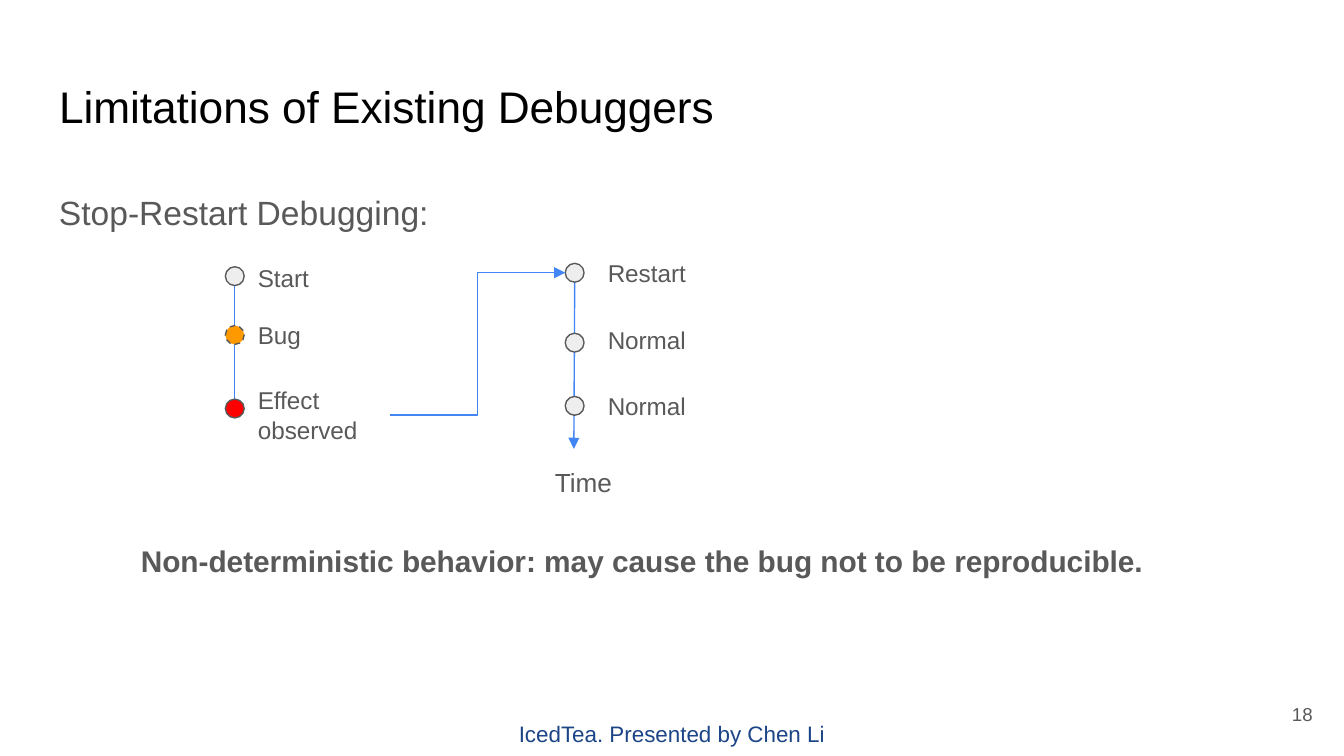
from lxml.etree import SubElement
from pptx import Presentation
from pptx.dml.color import RGBColor
from pptx.enum.dml import MSO_LINE
from pptx.enum.shapes import MSO_CONNECTOR, MSO_SHAPE
from pptx.enum.text import MSO_ANCHOR, PP_ALIGN
from pptx.oxml.ns import qn
from pptx.util import Inches, Pt

BLACK = RGBColor(0x00, 0x00, 0x00)
GRAY = RGBColor(0x59, 0x59, 0x59)
LIGHT = RGBColor(0xEE, 0xEE, 0xEE)
RED = RGBColor(0xFF, 0x00, 0x00)
ORANGE = RGBColor(0xFF, 0x99, 0x00)
BLUE = RGBColor(0x42, 0x85, 0xF4)
NAVY = RGBColor(0x1C, 0x45, 0x87)

COLUMNS, ROWS = 100, 56.25  # square grid cells of a tenth of an inch
NODE = 1.4  # node diameter in cells


class DebuggerSlide:
    font_name = "Arial"
    line_width = Pt(0.75)

    def __init__(self, presentation):
        self.slide = presentation.slides.add_slide(presentation.slide_layouts[6])
        self.column = presentation.slide_width / COLUMNS
        self.row = presentation.slide_height / ROWS

    def place(self, *cells):
        """Turn alternating column and row counts into slide lengths."""
        return [round(cell * (self.row if index % 2 else self.column))
                for index, cell in enumerate(cells)]

    def text(self, words, box, size, color=GRAY, bold=False,
             align=PP_ALIGN.LEFT, anchor=MSO_ANCHOR.TOP):
        frame = self.slide.shapes.add_textbox(*self.place(*box)).text_frame
        frame_format = {"word_wrap": True, "vertical_anchor": anchor}
        for side in ("left", "top", "right", "bottom"):
            frame_format[f"margin_{side}"] = Inches(0.1)
        for name, value in frame_format.items():
            setattr(frame, name, value)
        paragraph = frame.paragraphs[0]
        paragraph.alignment = align
        run = paragraph.add_run()
        run.text = words
        font_format = {"name": self.font_name, "size": Pt(size), "bold": bold}
        for name, value in font_format.items():
            setattr(run.font, name, value)
        run.font.color.rgb = color

    def node(self, center, middle, fill, dash=None):
        box = (center - NODE / 2, middle - NODE / 2, NODE, NODE)
        shape = self.slide.shapes.add_shape(MSO_SHAPE.OVAL, *self.place(*box))
        shape.shadow.inherit = False
        shape.fill.solid()
        shape.fill.fore_color.rgb = fill
        shape.line.color.rgb = GRAY
        shape.line.width = self.line_width
        if dash:
            shape.line.dash_style = dash

    def connector(self, start, end, kind=MSO_CONNECTOR.STRAIGHT, arrow=False):
        connector = self.slide.shapes.add_connector(kind, *self.place(*start, *end))
        connector.line.color.rgb = BLUE
        connector.line.width = self.line_width
        properties = connector._element.spPr
        if arrow:
            SubElement(properties.find(qn("a:ln")), qn("a:tailEnd"), type="triangle")
        SubElement(properties, qn("a:effectLst"))


def main():
    presentation = Presentation()
    presentation.slide_width = Inches(10)
    presentation.slide_height = presentation.slide_width * 9 // 16
    page = DebuggerSlide(presentation)

    # Title, subtitle and conclusion
    page.text("Limitations of Existing Debuggers", (3.41, 4.87, 93.2, 6.3), 23.7, BLACK)
    page.text("Stop-Restart Debugging:", (3.41, 13.3, 30.6, 5), 18)
    page.text("Non-deterministic behavior: may cause the bug not to be reproducible.",
              (9.5, 39.4, 82.7, 4.7), 16, bold=True)

    # Lines of the first run and of the rerun
    first_run, rerun = 17.47, 42.76
    page.connector((first_run, 21.3), (first_run, 29.7))
    page.connector((rerun, 21), (rerun - 0.06, 33.4), arrow=True)

    # Nodes with their labels
    first_left, rerun_left = 18.2, 44.24
    events = [
        # label, line, node middle, fill, dash, label left, top, width, height
        ("Start", first_run, 20.55, LIGHT, None, first_left, 18.6, 8.7, 4.2),
        ("Bug", first_run, 24.93, ORANGE, MSO_LINE.DASH, first_left, 22.83, 8.7, 4.2),
        ("Effect observed", first_run, 30.4, RED, None, first_left, 27.7, 10.8, 6.4),
        ("Restart", rerun, 20.3, LIGHT, None, rerun_left, 18.2, 8.7, 4.2),
        ("Normal", rerun, 25.5, LIGHT, None, rerun_left, 23.2, 8.7, 4.2),
        ("Normal", rerun, 30.2, LIGHT, None, rerun_left, 28.1, 8.7, 4.2),
    ]
    for label, center, middle, fill, dash, *box in events:
        page.node(center, middle, fill, dash)
        page.text(label, box, 13)
    page.text("Time", (40.3, 33.7, 8.7, 4.4), 14)

    # Jump from the observed effect to the restart
    page.connector((29, 30.9), (rerun - NODE / 2, 20.3), MSO_CONNECTOR.ELBOW, arrow=True)

    # Footer and page number
    page.text("IcedTea. Presented by Chen Li", (0, 52.4, COLUMNS, 4.4), 12, NAVY,
              align=PP_ALIGN.CENTER, anchor=MSO_ANCHOR.MIDDLE)
    page.text("18", (92.65, 51, 6, 4.3), 10,
              align=PP_ALIGN.RIGHT, anchor=MSO_ANCHOR.MIDDLE)

    presentation.save("out.pptx")


if __name__ == "__main__":
    main()
